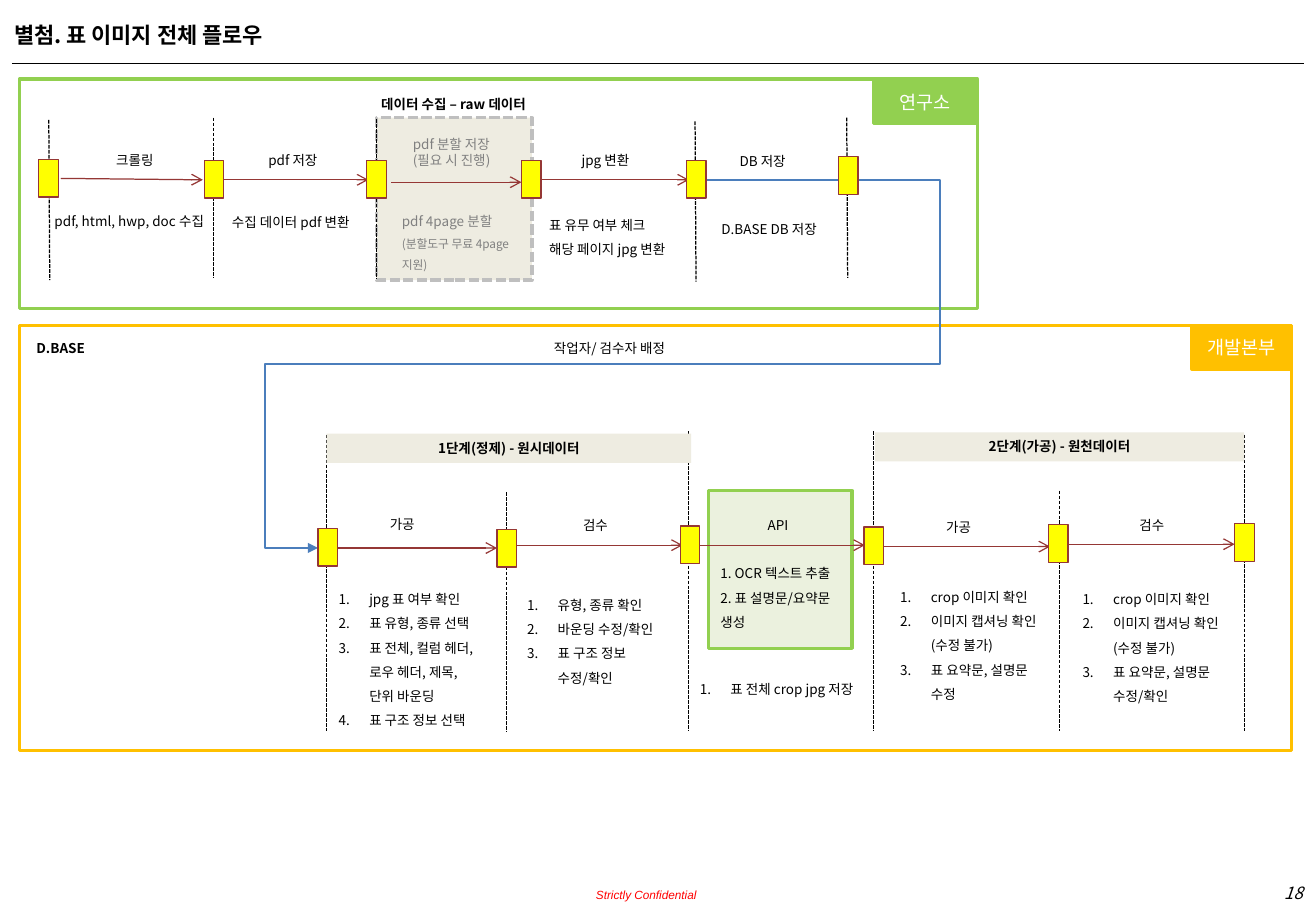
from lxml import etree
from pptx import Presentation
from pptx import util as u
from pptx.dml.color import RGBColor
from pptx.enum import dml, shapes, text
from pptx.oxml import ns

FONT = "Noto Sans CJK KR"
GREEN, AMBER, BEIGE, MAROON, GRAY = "92D050", "FFC000", "EEECE1", "953735", "808080"
hex_color = RGBColor.from_string

presentation = Presentation()
presentation.slide_width, presentation.slide_height = u.Cm(27.51), u.Cm(19.05)
slide = presentation.slides.add_slide(presentation.slide_layouts[6])


def add_box(left, top, width, height, content="", fill=None, line=None, weight=2,
            size=8, color="000000", bold=False, align="LEFT", anchor="TOP",
            spacing=None, numbered=False):
    """Add a rectangle, or a text box when there is neither fill nor line."""
    frame = [u.Cm(value) for value in (left, top, width, height)]
    if fill or line:
        shape = slide.shapes.add_shape(shapes.MSO_SHAPE.RECTANGLE, *frame)
        shape.shadow.inherit = False
    else:
        shape = slide.shapes.add_textbox(*frame)
    if fill:
        shape.fill.solid()
        shape.fill.fore_color.rgb = hex_color(fill)
    else:
        shape.fill.background()
    if line:
        shape.line.color.rgb = hex_color(line)
        shape.line.width = u.Pt(weight)
    else:
        shape.line.fill.background()
    if not content:
        return shape
    text_frame = shape.text_frame
    text_frame.word_wrap = True
    text_frame.vertical_anchor = text.MSO_ANCHOR[anchor]
    text_frame.text = content
    for paragraph in text_frame.paragraphs:
        paragraph.alignment = text.PP_ALIGN[align]
        paragraph.line_spacing = spacing
        if numbered:
            properties = paragraph._p.get_or_add_pPr()
            properties.set("marL", str(u.Cm(0.64)))
            properties.set("indent", str(-u.Cm(0.64)))
            etree.SubElement(properties, ns.qn("a:buAutoNum"), type="arabicPeriod")
        for run in paragraph.runs:
            run.font.name, run.font.size, run.font.bold = FONT, u.Pt(size), bold
            run.font.color.rgb = hex_color(color)
            etree.SubElement(run._r.get_or_add_rPr(), ns.qn("a:ea"), typeface=FONT)
    return shape


def add_line(x1, y1, x2, y2, color="000000", weight=0.75, dashed=False, head=None,
             kind=shapes.MSO_CONNECTOR.STRAIGHT):
    connector = slide.shapes.add_connector(kind, u.Cm(x1), u.Cm(y1), u.Cm(x2), u.Cm(y2))
    connector.line.color.rgb = hex_color(color)
    connector.line.width = u.Pt(weight)
    if dashed:
        connector.line.dash_style = dml.MSO_LINE.SQUARE_DOT
    if head:
        etree.SubElement(connector.line._get_or_add_ln(), ns.qn("a:tailEnd"), type=head)
    etree.SubElement(connector._element.spPr, ns.qn("a:effectLst"))
    return connector


# Title and rule
add_box(0.05, 0.33, 26.72, 0.81, "별첨. 표 이미지 전체 플로우", size=13, bold=True)
add_line(0.25, 1.32, 27.25, 1.32)

# Highlighted steps
add_box(14.81, 10.26, 3, 3.3, fill="EBF1DE", line=GREEN)
split_step = add_box(7.87, 2.46, 3.25, 3.4, fill=BEIGE, line="BFBFBF")
split_step.line.dash_style = dml.MSO_LINE.SQUARE_DOT

# Dashed guides
for x, top, lean in [(1.02, 2.51, 0.02), (4.47, 2.46, 0), (7.87, 2.49, 0),
                     (14.53, 2.54, 0.02), (17.7, 2.46, 0.02)]:
    add_line(x, top, x + lean, top + 3.35, dashed=True)
for x, top in [(6.82, 9.09), (10.59, 10.29), (14.4, 9.02),
               (18.26, 9.02), (22.15, 10.26), (26.01, 9.09)]:
    add_line(x, top, x, 15.29, dashed=True)

# Stage bands
add_box(6.83, 9.07, 7.62, 0.61, "1단계(정제) - 원시데이터", fill=BEIGE, bold=True, align="CENTER")
add_box(18.29, 9.04, 7.72, 0.61, "2단계(가공) - 원천데이터", fill=BEIGE, bold=True, align="CENTER")

# Team panels with their tags
add_box(0.41, 1.65, 20.02, 4.8, line=GREEN)
add_box(0.41, 6.81, 26.59, 8.89, line=AMBER)
for left, top, width, team, color in [(18.26, 1.68, 2.16, "연구소", GREEN),
                                      (24.92, 6.81, 2.08, "개발본부", AMBER)]:
    add_box(left, top, width, 0.91, team, fill=color, line=color, size=11,
            color="FFFFFF", align="CENTER", anchor="MIDDLE")

# Hand-over from the upper row to the lower row
handover = add_line(14.76, 3.76, 6.65, 11.46, "4B7EBC", 1, head="triangle",
                    kind=shapes.MSO_CONNECTOR.ELBOW)
geometry = handover._element.spPr.find(ns.qn("a:prstGeom"))
geometry.set("prst", "bentConnector5")
adjustments = geometry.find(ns.qn("a:avLst"))
if adjustments is None:
    adjustments = etree.SubElement(geometry, ns.qn("a:avLst"))
for number, value in enumerate((-60400, 50000, 113600), start=1):
    etree.SubElement(adjustments, ns.qn("a:gd"), name=f"adj{number}", fmla=f"val {value}")

# Step arrows
for x1, y1, x2, y2 in [
    (1.27, 3.73, 4.24, 3.76), (4.67, 3.76, 7.7, 3.76),
    (8.18, 3.81, 10.9, 3.81), (11.3, 3.76, 14.4, 3.76),
    (7.06, 11.46, 10.39, 11.46), (10.8, 11.4, 14.27, 11.4), (14.63, 11.4, 18.08, 11.4),
    (18.47, 11.43, 21.95, 11.43), (22.35, 11.38, 25.81, 11.38),
]:
    add_line(x1, y1, x2, y2, MAROON, head="arrow")

# Yellow nodes
for left, top in [
    (0.81, 3.33), (4.27, 3.35), (7.67, 3.35), (10.9, 3.35), (14.35, 3.35), (17.53, 3.28),
    (6.65, 11.05), (10.39, 11.07), (14.22, 11), (18.06, 11.02), (21.92, 10.97), (25.81, 10.95),
]:
    add_box(left, top, 0.41, 0.79, fill="FFFF00", line=MAROON, weight=0.75)

# Step names
for left, top, width, name in [
    (2.18, 3.05, 1.8, "크롤링"), (5.36, 3.05, 2, "pdf 저장"),
    (11.91, 3.05, 2.31, "jpg 변환"), (15.21, 3.07, 2.03, "DB 저장"),
    (11.33, 6.99, 3.78, "작업자/ 검수자 배정"),
    (7.9, 10.67, 1.83, "가공"), (11.94, 10.69, 1.45, "검수"), (15.8, 10.69, 1.45, "API"),
    (19.53, 10.72, 1.45, "가공"), (23.57, 10.69, 1.45, "검수"),
]:
    add_box(left, top, width, 0.61, name)
add_box(7.72, 1.88, 3.99, 0.61, "데이터 수집 – raw 데이터", bold=True)
add_box(0.51, 6.99, 2.62, 0.61, "D.BASE", bold=True)
add_box(8.38, 2.72, 2.31, 0.94, "pdf 분할 저장\n(필요 시 진행)", color=GRAY)

# Step descriptions
for left, top, width, height, description in [
    (0.89, 4.17, 3.81, 0.71, "pdf, html, hwp, doc 수집"),
    (4.6, 4.19, 3.4, 0.71, "수집 데이터 pdf 변환"),
    (11.23, 4.24, 3.23, 1.22, "표 유무 여부 체크\n해당 페이지 jpg 변환"),
    (14.83, 4.32, 2.84, 0.71, "D.BASE DB 저장"),
    (14.81, 11.53, 3.23, 1.73, "1. OCR 텍스트 추출\n2. 표 설명문/요약문 생성"),
]:
    add_box(left, top, width, height, description, spacing=1.5)
split_note = add_box(8.15, 4.17, 3.15, 1.6, "pdf 4page 분할\n(분할도구 무료 4page 지원)",
                     color=GRAY, spacing=1.5)
split_note.text_frame.paragraphs[1].runs[0].font.size = u.Pt(7)

# Numbered task lists
for left, top, width, height, tasks in [
    (6.83, 12.07, 3.51, 3.28,
     "jpg 표 여부 확인\n표 유형, 종류 선택\n"
     "표 전체, 컬럼 헤더, 로우 헤더, 제목, 단위 바운딩\n표 구조 정보 선택"),
    (10.77, 12.19, 3.58, 2.24, "유형, 종류 확인\n바운딩 수정/확인\n표 구조 정보 수정/확인"),
    (14.38, 13.94, 3.96, 0.71, "표 전체 crop jpg 저장"),
    (18.57, 12.02, 3.51, 2.74, "crop 이미지 확인\n이미지 캡셔닝 확인(수정 불가)\n표 요약문, 설명문 수정"),
    (22.38, 12.07, 3.51, 2.74, "crop 이미지 확인\n이미지 캡셔닝 확인(수정 불가)\n표 요약문, 설명문 수정/확인"),
]:
    add_box(left, top, width, height, tasks, spacing=1.5, numbered=True)

# Footer
notice = add_box(10.67, 18.24, 3.89, 0.61, "Strictly Confidential", size=7, color="FF0000",
                 align="RIGHT", anchor="BOTTOM")
notice.text_frame.margin_right = notice.text_frame.margin_bottom = 0
notice.text_frame.paragraphs[0].runs[0].font.name = "Arial"
page_number = add_box(23.24, 18.34, 4.24, 0.69, "18", size=10, align="RIGHT")
for footer in (notice, page_number):
    footer.text_frame.paragraphs[0].runs[0].font.italic = True

presentation.save("out.pptx")
